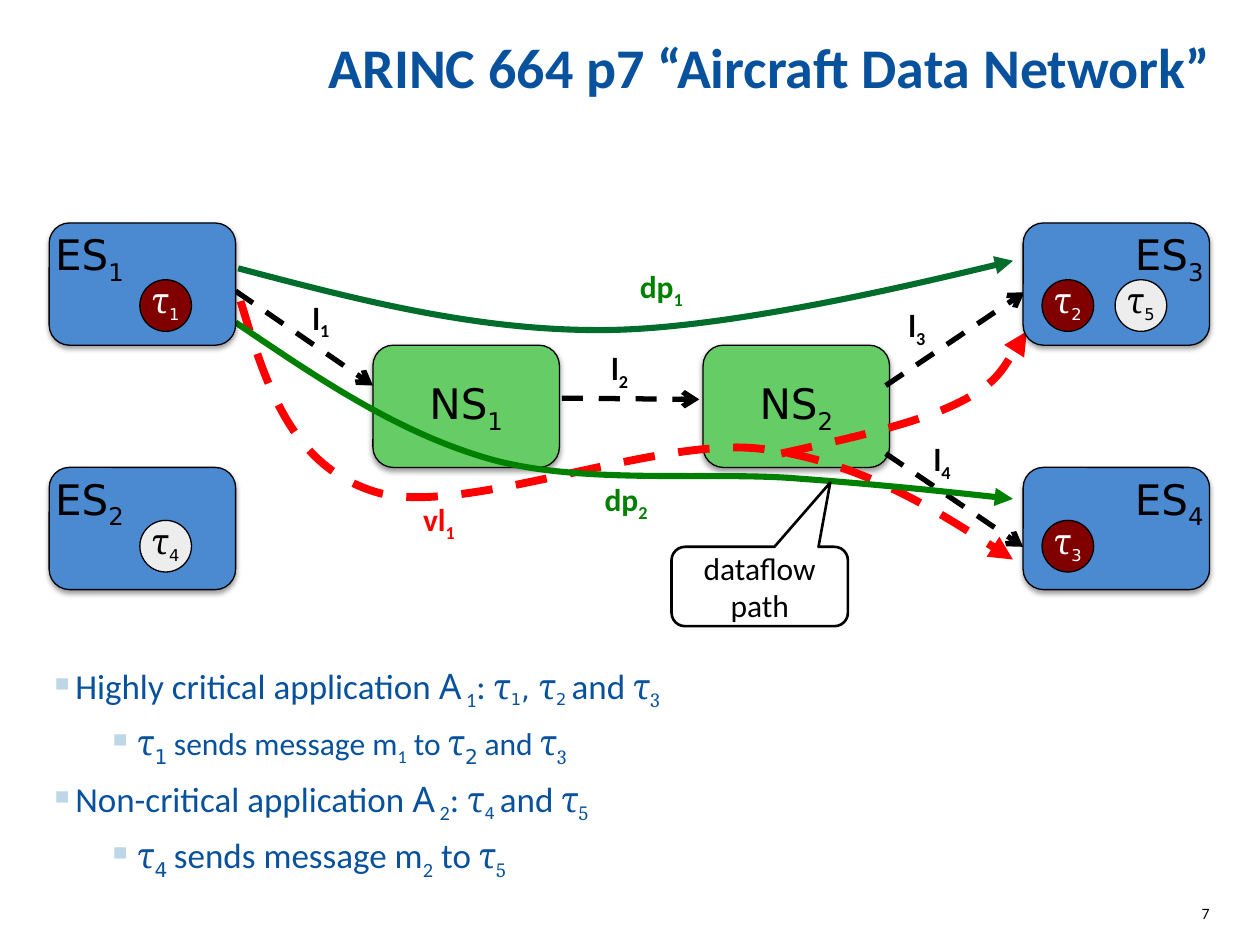
from lxml import etree
from pptx import Presentation
from pptx import util as u
from pptx.dml.color import RGBColor
from pptx.enum import dml, shapes, text
from pptx.oxml import parse_xml
from pptx.oxml.ns import nsdecls, qn

BLUE, BULLET = RGBColor(0x08, 0x51, 0x9C), RGBColor(0xBD, 0xD7, 0xE7)
BLACK, WHITE = RGBColor(0, 0, 0), RGBColor(255, 255, 255)
GREEN, DARK_GREEN, RED = RGBColor(0, 0x80, 0), RGBColor(0, 0x6D, 0x2C), RGBColor(255, 0, 0)
SYSTEM, SWITCH = RGBColor(0x4B, 0x89, 0xD0), RGBColor(0x66, 0xCC, 0x66)
CRITICAL, NON_CRITICAL = RGBColor(0x80, 0, 0), RGBColor(0xED, 0xED, 0xED)
SANS, SERIF, NODE_FONT, SCRIPT = "Calibri", "Cambria", "DejaVu Sans", "Noto Sans"
LEFT, RIGHT = text.PP_ALIGN.LEFT, text.PP_ALIGN.RIGHT
CENTER = text.PP_ALIGN.CENTER
TOP, MIDDLE, BOTTOM = text.MSO_ANCHOR.TOP, text.MSO_ANCHOR.MIDDLE, text.MSO_ANCHOR.BOTTOM

# Content: a run is (text, font, size, is subscript)
TITLE = "ARINC 664 p7 “Aircraft Data Network”"
NODE_W, NODE_H, TASK_D = 1.48, 0.97, 0.41
SWITCHES = [("1", 2.96, 2.74), ("2", 5.58, 2.74)]
# number, left, top, alignment, tasks (number, left, top, critical)
SYSTEMS = [
    ("1", 0.39, 1.77, LEFT, [("1", 1.11, 2.22, True)]),
    ("2", 0.39, 3.71, LEFT, [("4", 1.11, 4.13, False)]),
    ("3", 8.12, 1.77, RIGHT, [("2", 8.27, 2.22, True), ("5", 8.85, 2.22, False)]),
    ("4", 8.12, 3.71, RIGHT, [("3", 8.27, 4.13, True)]),
]
LINKS = [
    (1.87, 2.31, 2.96, 3.06), (7.03, 3.6, 8.12, 4.34),
    (7.03, 3.06, 8.13, 2.32), (4.46, 3.16, 5.55, 3.17),
]
# colour, width, dashed, Bézier points: start, then three per segment
FLOWS = [
    (RED, 4.5, True, [(6.2, 3.6), (6.74, 3.48), (7.28, 3.36), (7.6, 3.2),
                      (7.93, 3.04), (8.15, 2.63), (8.15, 2.63)]),
    (RED, 4.5, True, [(1.91, 2.39), (2.11, 3.05), (2.31, 3.71), (3, 3.91), (3.69, 4.1),
                      (5.18, 3.47), (6.02, 3.56), (6.86, 3.65), (8.04, 4.44), (8.04, 4.44)]),
    (DARK_GREEN, 3.5, False, [(1.89, 2.13), (2.84, 2.38), (3.79, 2.63), (4.81, 2.62),
                              (5.84, 2.61), (8.04, 2.07), (8.04, 2.07)]),
    (GREEN, 3.5, False, [(1.87, 2.56), (2.52, 3), (3.16, 3.44), (3.91, 3.65), (4.65, 3.85),
                         (5.66, 3.74), (6.35, 3.8), (7.04, 3.85), (8.04, 3.96), (8.04, 3.96)]),
]
FLOW_LABELS = [("dp", "1", 4.98, 2.07, 0.88, GREEN), ("vl", "1", 3.26, 3.92, 0.53, RED),
               ("dp", "2", 4.7, 3.76, 0.88, GREEN)]
LINK_LABELS = [("1", 2.48, 2.37), ("2", 4.85, 2.77), ("3", 7.21, 2.43), ("4", 7.41, 3.49)]
TAU = ("τ", SERIF, 20, False)


def application(kind, number):
    return [(kind + " application ", SANS, 20, False), ("A", SCRIPT, 20, False),
            (" " + number, SANS, 20, True), (": ", SANS, 20, False)]


def task_index(number, font=NODE_FONT, size=16):
    return number, font, size, True


AND = ("and ", SANS, 20, False)
BULLETS = [
    (0, application("Highly critical", "1") + [
        TAU, task_index("1"), (", ", NODE_FONT, 16, False), TAU, task_index("2 "), AND,
        TAU, task_index("3", SERIF, 20)]),
    (1, [TAU, task_index("1 ", size=20), ("sends message m", SANS, 18, False),
         ("1", SANS, 18, True), (" to ", SANS, 18, False), TAU, task_index("2 ", size=20),
         ("and ", SANS, 18, False), TAU, task_index("3", SERIF, 20)]),
    (0, application("Non-critical", "2") + [
        TAU, task_index("4 "), AND, TAU, task_index("5", SERIF, 20)]),
    (1, [TAU, task_index("4 ", size=20), ("sends message m", SANS, 20, False),
         ("2", SANS, 20, True), (" to ", SANS, 20, False), TAU,
         task_index("5", SERIF, 20)]),
]

prs = Presentation()
prs.slide_width, prs.slide_height = u.Inches(10), u.Inches(7.5)
slide = prs.slides.add_slide(prs.slide_layouts[6])


def write(shape, paragraphs, color=BLACK, bold=False, align=LEFT, anchor=TOP,
          inset=(0, 0), half_before=False, line_spacing=None, bullets=False):
    """Fill a shape with paragraphs given as (level, runs)."""
    frame = shape.text_frame
    frame.word_wrap, frame.vertical_anchor = True, anchor
    frame.margin_left = frame.margin_right = u.Inches(inset[0])
    frame.margin_top = frame.margin_bottom = u.Inches(inset[1])
    for i, (level, runs) in enumerate(paragraphs):
        p = frame.add_paragraph() if i else frame.paragraphs[0]
        p.alignment, p.level = align, level
        if line_spacing:
            p.line_spacing = line_spacing
        props = p._p.get_or_add_pPr()
        if half_before:
            before = etree.SubElement(props, qn("a:spcBef"))
            etree.SubElement(before, qn("a:spcPct"), val="50000")
        if bullets:
            p.space_before = u.Pt(5)
            props.set("marL", str(u.Inches(0.2 + 0.5 * level)))
            props.set("indent", str(u.Inches(-0.24)))
            etree.SubElement(etree.SubElement(props, qn("a:buClr")), qn("a:srgbClr"),
                             val=str(BULLET))
            etree.SubElement(props, qn("a:buChar"), char="▪")
        for content, font, size, subscript in runs:
            run = p.add_run()
            run.text = content
            run.font.name, run.font.size = font, u.Pt(size)
            run.font.bold, run.font.color.rgb = bold, color
            if subscript:
                run._r.get_or_add_rPr().set("baseline", "-25000")


def text_box(left, top, width, height, paragraphs, **style):
    box = slide.shapes.add_textbox(*map(u.Inches, (left, top, width, height)))
    write(box, paragraphs, **style)


def solid(parent, preset, left, top, width, height, fill=None, line=0.75, shadow=False):
    shape = parent.add_shape(preset, *map(u.Inches, (left, top, width, height)))
    shape.shadow.inherit = False
    if fill is None:
        shape.fill.background()
    else:
        shape.fill.solid()
        shape.fill.fore_color.rgb = fill
    shape.line.color.rgb, shape.line.width = BLACK, u.Pt(line)
    if shadow:
        shape._element.spPr.find(qn("a:effectLst")).append(parse_xml(
            f'<a:outerShdw {nsdecls("a")} blurRad="{u.Pt(3.1)}" dist="{u.Pt(1.6)}" '
            'dir="5400000" rotWithShape="0"><a:srgbClr val="000000">'
            '<a:alpha val="38000"/></a:srgbClr></a:outerShdw>'))
    return shape


def node(parent, left, top, fill):
    return solid(parent, shapes.MSO_SHAPE.ROUNDED_RECTANGLE, left, top, NODE_W, NODE_H,
                 fill, shadow=True)


def arrow(shape, color, width, dashed, head):
    line = shape.line
    line.color.rgb, line.width = color, u.Pt(width)
    if dashed:
        line.dash_style = dml.MSO_LINE.DASH
    etree.SubElement(line._get_or_add_ln(), qn("a:tailEnd"), type=head)


def indexed(name, number, font, size, index_size=None, index_font=None):
    return [(0, [(name, font, size, False),
                 (number, index_font or font, index_size or size, True)])]


# Page number and title
text_box(9.27, 7.17, 0.33, 0.33, [(0, [("7", SANS, 9, False)])], align=RIGHT)
text_box(0.39, 0, 9.22, 0.79, [(0, [(TITLE, SANS, 32, False)])], color=BLUE, bold=True,
         align=RIGHT, anchor=BOTTOM, line_spacing=0.8)

# Network switches
for number, left, top in SWITCHES:
    write(node(slide.shapes, left, top, SWITCH), indexed("NS", number, NODE_FONT, 24),
          align=CENTER, anchor=MIDDLE, half_before=True)

# Physical links
for ends in LINKS:
    link = slide.shapes.add_connector(shapes.MSO_CONNECTOR.STRAIGHT, *map(u.Inches, ends))
    arrow(link, BLACK, 3, True, "arrow")
    etree.SubElement(link._element.spPr, qn("a:effectLst"))

# Virtual link and dataflow paths: each three points become one Bézier segment
for color, width, dashed, points in FLOWS:
    start, *rest = [(u.Inches(x), u.Inches(y)) for x, y in points]
    builder = slide.shapes.build_freeform(*start)
    builder.add_line_segments(rest, close=False)
    flow = builder.convert_to_shape()
    flow.shadow.inherit = False
    flow.fill.background()
    arrow(flow, color, width, dashed, "triangle")
    steps = list(flow._element.iter(qn("a:lnTo")))
    for i in range(0, len(steps), 3):
        curve = etree.SubElement(steps[i].getparent(), qn("a:cubicBezTo"))
        for step in steps[i:i + 3]:
            curve.append(step[0])
            step.getparent().remove(step)

# Flow and link labels
for name, number, left, top, width, color in FLOW_LABELS:
    text_box(left, top, width, 0.4, indexed(name, number, SANS, 18), color=color, bold=True,
             inset=(0.1, 0.05))
for number, left, top in LINK_LABELS:
    text_box(left, top, 0.24, 0.3, indexed("l", number, SANS, 18), bold=True)

# End systems with their tasks
for number, left, top, align, tasks in SYSTEMS:
    group = slide.shapes.add_group_shape().shapes
    write(node(group, left, top, SYSTEM), indexed("ES", number, NODE_FONT, 24),
          align=align, half_before=True)
    for task, x, y, critical in tasks:
        circle = solid(group, shapes.MSO_SHAPE.OVAL, x, y, TASK_D, TASK_D,
                       CRITICAL if critical else NON_CRITICAL)
        write(circle, indexed("τ", task, SERIF, 20, 16, NODE_FONT),
              color=WHITE if critical else BLACK, align=CENTER, anchor=BOTTOM,
              half_before=True)

# Callout
callout = solid(slide.shapes, shapes.MSO_SHAPE.ROUNDED_RECTANGULAR_CALLOUT,
                5.33, 4.34, 1.4, 0.63, line=1.5)
for i, value in enumerate((0.4, -1.31, 0.17)):
    callout.adjustments[i] = value
write(callout, [(0, [("dataflow path", SANS, 18, False)])], align=CENTER, anchor=MIDDLE)

# Applications
text_box(0.39, 5.27, 6.67, 0.7, BULLETS, color=BLUE, bullets=True)

prs.save("out.pptx")
